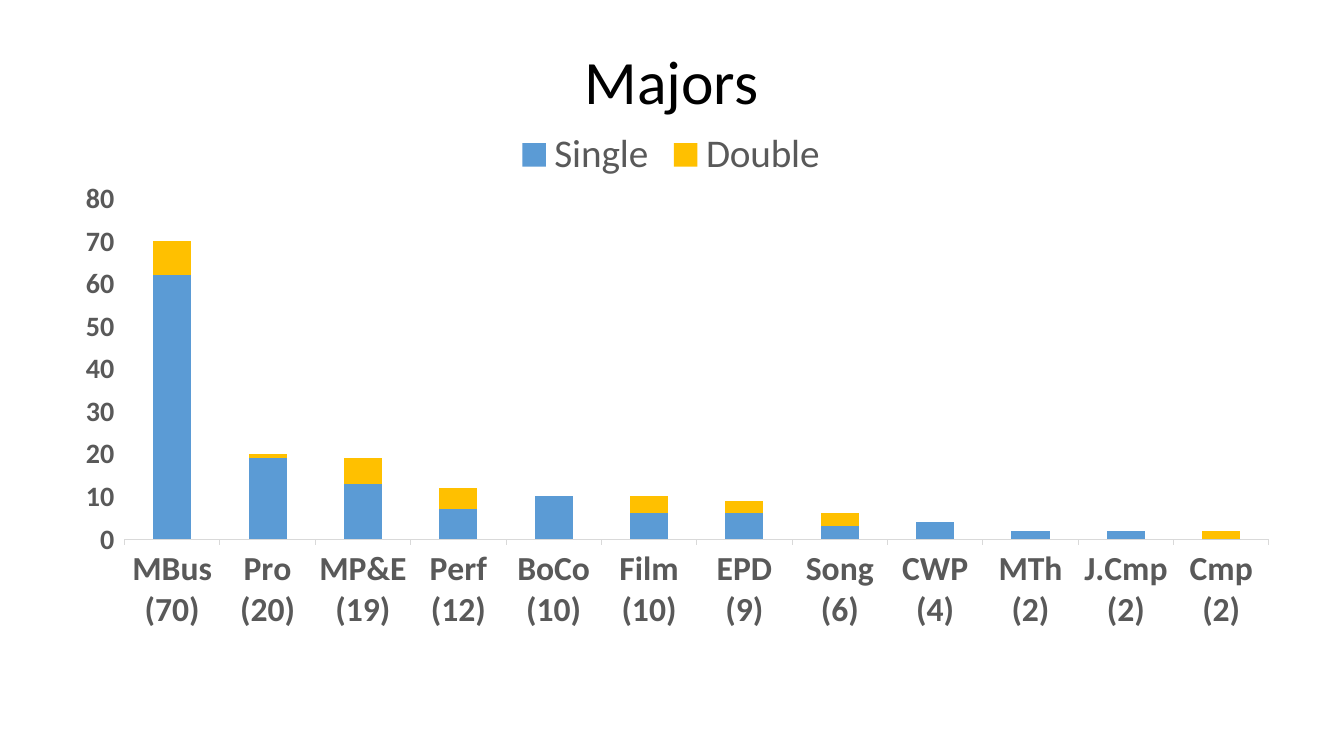
from lxml import etree
from pptx import Presentation
from pptx.chart.data import CategoryChartData as Data
from pptx.dml.color import RGBColor as RGB
from pptx.enum.chart import XL_CHART_TYPE as Kind, XL_LEGEND_POSITION as Spot, XL_TICK_MARK as Tick
from pptx.enum.text import MSO_ANCHOR as Anchor, PP_ALIGN as Align
from pptx.oxml.ns import qn
from pptx.util import Pt

TITLE = "Majors"
NAMES = [
    "MBus (70)", "Pro (20)", "MP&E (19)", "Perf (12)", "BoCo (10)", "Film (10)",
    "EPD (9)", "Song (6)", "CWP (4)", "MTh (2)", "J.Cmp (2)", "Cmp (2)",
]
BLANK = [None] * len(NAMES)
SERIES = [
    ("Single", "5B9BD5", [62, 19, 13, 7, 10, 6, 6, 3, 4, 2, 2, 0]),
    ("Series 2", "ED7D31", BLANK),
    ("Series 3", "A5A5A5", BLANK),
    ("Double", "FFC000", [8, 1, 6, 5, None, 4, 3, 3, 0, 0, 0, 2]),
    ("Series 5", "4472C4", BLANK),
]
PLOT = {"x": 0.055, "y": 0.146, "w": 0.932, "h": 0.603}
FACE, GREY, RULE = "Calibri", "595959", "D9D9D9"
SCALE = 914400 / 100.8


def px(*nums):
    return [round(n * SCALE) for n in nums]


def tint(code):
    return RGB.from_string(code)


def style(font, size, color=GREY, bold=False):
    font.name, font.size, font.bold = FACE, Pt(size), bold
    font.color.rgb = tint(color)


def label(slide, text, box, size, color, align=Align.CENTER):
    frame = slide.shapes.add_textbox(*px(*box)).text_frame
    frame.word_wrap = True
    frame.vertical_anchor = Anchor.MIDDLE
    para = frame.paragraphs[0]
    para.alignment, para.line_spacing = align, 0.9
    run = para.add_run()
    run.text = text
    style(run.font, size, color)


def place(chart, parts):
    area = chart.plots[0]._element.getparent()
    for old in area.findall(qn("c:layout")):
        area.remove(old)
    layout = etree.Element(qn("c:layout"))
    manual = etree.SubElement(layout, qn("c:manualLayout"))
    rows = [("layoutTarget", "inner"), ("xMode", "edge"), ("yMode", "edge"), *parts.items()]
    for tag, val in rows:
        etree.SubElement(manual, qn("c:" + tag)).set("val", str(val))
    area.insert(0, layout)


def trim(legend):
    gone = [i for i, (_, _, vals) in enumerate(SERIES) if vals is BLANK]
    for at, i in enumerate(gone, 1):
        entry = etree.Element(qn("c:legendEntry"))
        etree.SubElement(entry, qn("c:idx")).set("val", str(i))
        etree.SubElement(entry, qn("c:delete")).set("val", "1")
        legend._element.insert(at, entry)


def graph(slide, box):
    data = Data()
    data.categories = NAMES
    for name, _, vals in SERIES:
        data.add_series(name, vals)
    chart = slide.shapes.add_chart(Kind.COLUMN_STACKED, *px(*box), data).chart
    chart.has_title = False
    style(chart.font, 10, "000000")

    plot = chart.plots[0]
    plot.gap_width, plot.overlap, plot.vary_by_categories = 150, 100, False
    for bar, (_, color, _) in zip(plot.series, SERIES):
        bar.format.fill.solid()
        bar.format.fill.fore_color.rgb = tint(color)

    chart.has_legend = True
    chart.legend.position = Spot.TOP
    chart.legend.include_in_layout = False
    style(chart.legend.font, 28)
    trim(chart.legend)

    base, side = chart.category_axis, chart.value_axis
    style(base.tick_labels.font, 24, bold=True)
    style(side.tick_labels.font, 20, bold=True)
    base.major_tick_mark = side.major_tick_mark = Tick.OUTSIDE
    base.format.line.color.rgb = tint(RULE)
    base.format.line.width = Pt(0.75)
    side.format.line.fill.background()
    side.has_major_gridlines = False
    side.minimum_scale, side.maximum_scale, side.major_unit = 0, 80, 10
    place(chart, PLOT)


def main():
    deck = Presentation()
    deck.slide_width, deck.slide_height = px(1344, 756)
    slide = deck.slides.add_slide(deck.slide_layouts[6])
    label(slide, TITLE, (92, 40, 1159, 89), 44, "000000")
    graph(slide, (57, 116, 1228, 565))
    deck.save("out.pptx")


if __name__ == "__main__":
    main()
